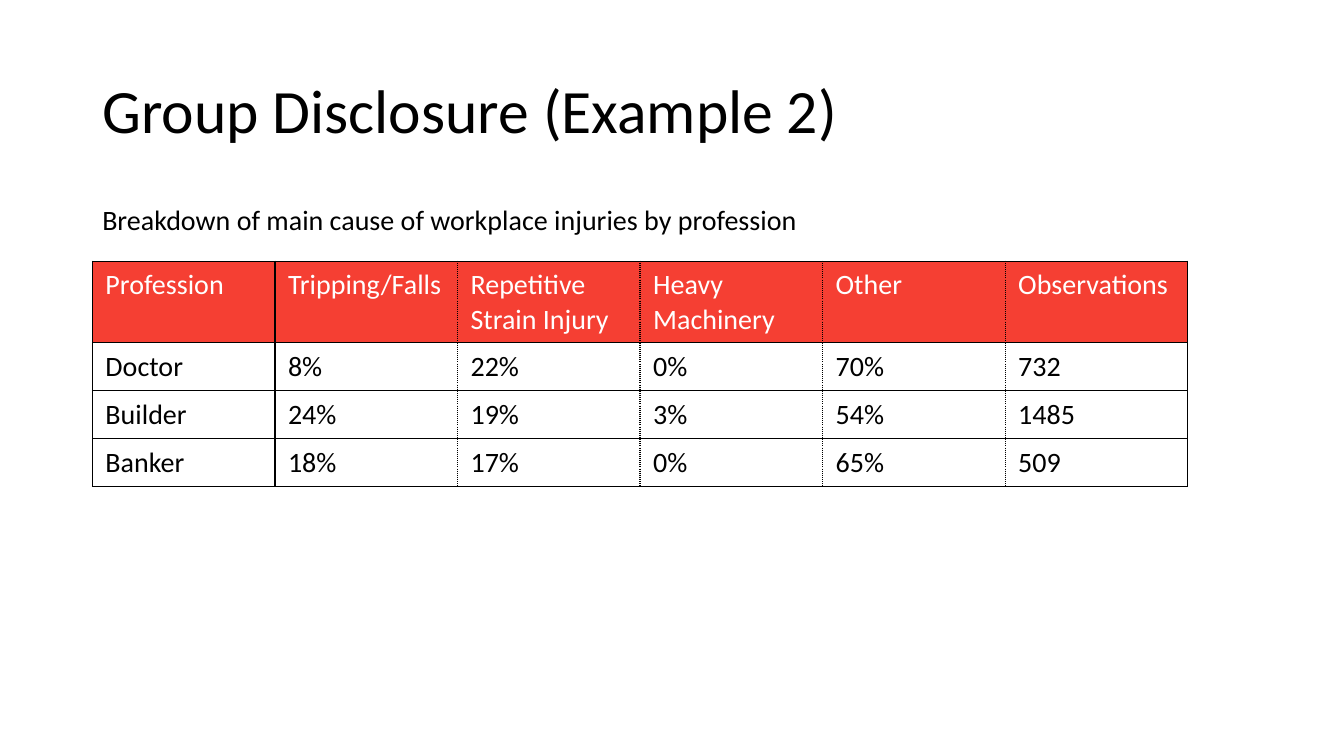
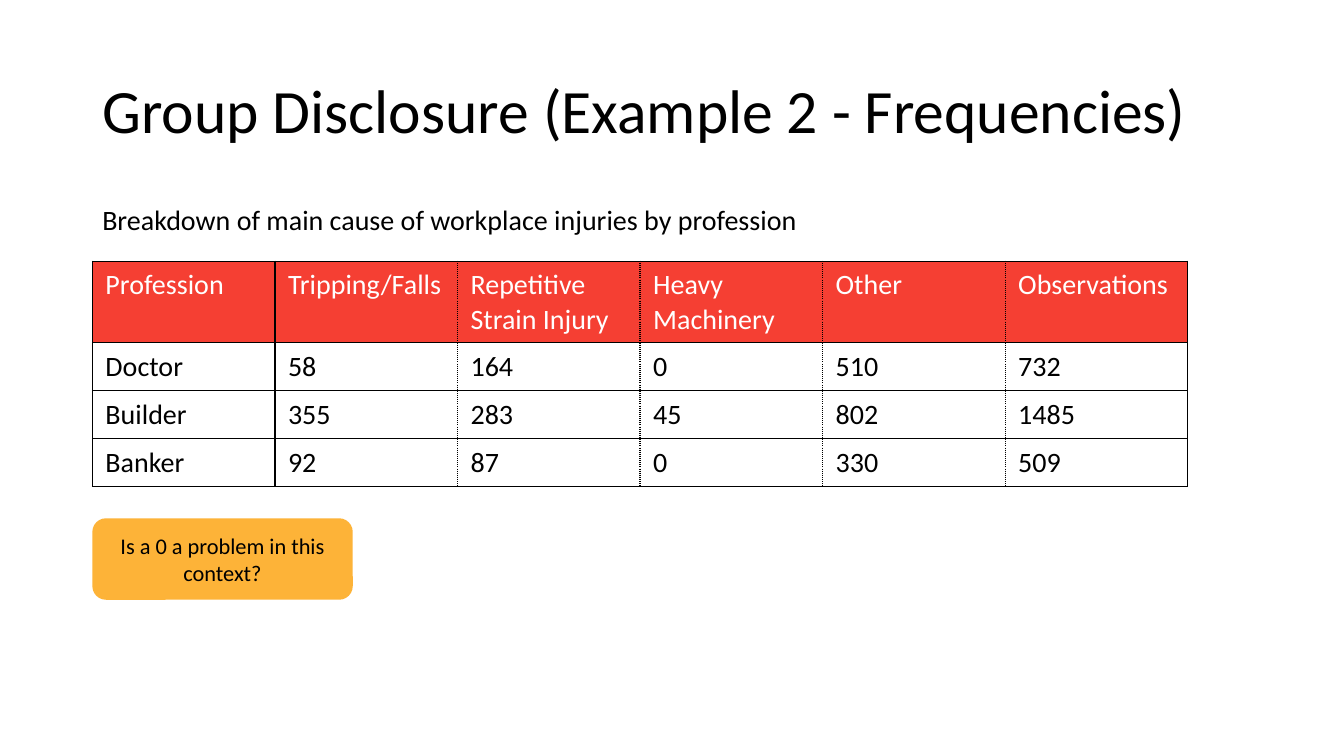
import dataclasses

import lxml.etree
import pptx
import pptx.dml.color
import pptx.enum.shapes
import pptx.enum.text
import pptx.oxml.ns
import pptx.util

COLS, ROWS = 160, 90
UNIT = pptx.util.Inches(7.5) // ROWS


@dataclasses.dataclass(frozen=True)
class Theme:
    """Hold the colours, font and sizes that the slides share."""
    font: str = "Calibri"
    ink: str = "000000"
    pale: str = "FFFFFF"
    head: str = "F53F33"
    note: str = "FDB338"
    title: int = 44
    body: int = 20
    small: int = 16
    rule: float = 1


@dataclasses.dataclass(frozen=True)
class Box:
    """Hold a region in columns and rows of the slide grid."""
    left: float
    top: float
    width: float
    height: float

    def area(self):
        """Return the region in slide lengths."""
        return [size(n) for n in (self.left, self.top, self.width, self.height)]


THEME = Theme()
TITLE = Box(11, 4.8, 138, 17.4)
LEAD = Box(11, 24, 138, 6)
GRID = Box(11, 31.1, 130.4, 26.8)
NOTE = Box(11, 61.7, 31, 9.7)
HEAD_ROW = 9.7

INTRO = "Breakdown of main cause of workplace injuries by profession"
HEADS = ["Profession", "Tripping/Falls", "Repetitive Strain Injury",
         "Heavy Machinery", "Other", "Observations"]
SHARES = [
    ["Doctor", "8%", "22%", "0%", "70%", "732"],
    ["Builder", "24%", "19%", "3%", "54%", "1485"],
    ["Banker", "18%", "17%", "0%", "65%", "509"],
]
COUNTS = [
    ["Doctor", "58", "164", "0", "510", "732"],
    ["Builder", "355", "283", "45", "802", "1485"],
    ["Banker", "92", "87", "0", "330", "509"],
]


def size(units):
    """Turn grid units into a slide length."""
    return pptx.util.Emu(round(units * UNIT))


def tint(code):
    """Turn a hex code into a colour."""
    return pptx.dml.color.RGBColor.from_string(code)


def write(frame, text, points, ink=THEME.ink, align=pptx.enum.text.PP_ALIGN.LEFT):
    """Set the text of a frame and format its runs."""
    frame.text = text
    frame.word_wrap = True
    for para in frame.paragraphs:
        para.alignment = align
        for run in para.runs:
            run.font.name = THEME.font
            run.font.size = pptx.util.Pt(points)
            run.font.color.rgb = tint(ink)


def edge(cell, sides):
    """Draw the borders of a cell from pairs of side and dash."""
    props = cell._tc.get_or_add_tcPr()
    for place, (side, dash) in enumerate(sides):
        line = lxml.etree.Element(pptx.oxml.ns.qn(f"a:ln{side}"),
                                  w=str(pptx.util.Pt(THEME.rule)))
        fill = lxml.etree.SubElement(line, pptx.oxml.ns.qn("a:solidFill"))
        lxml.etree.SubElement(fill, pptx.oxml.ns.qn("a:srgbClr"), val=THEME.ink)
        lxml.etree.SubElement(line, pptx.oxml.ns.qn("a:prstDash"), val=dash)
        props.insert(place, line)


def add_title(slide, box, text):
    """Place and format the title."""
    shape = slide.shapes.title
    shape.left, shape.top, shape.width, shape.height = box.area()
    frame = shape.text_frame
    write(frame, text, THEME.title)
    frame.auto_size = pptx.enum.text.MSO_AUTO_SIZE.NONE
    frame.vertical_anchor = pptx.enum.text.MSO_ANCHOR.MIDDLE
    frame.paragraphs[0].line_spacing = 0.9


def add_lead(slide, box, text):
    """Place the line that introduces the table."""
    frame = slide.shapes.add_textbox(*box.area()).text_frame
    write(frame, text, THEME.body)
    frame.paragraphs[0].line_spacing = 0.9


def add_grid(slide, box, rows):
    """Place a table with a coloured head and dotted inner columns."""
    wide = len(HEADS)
    table = slide.shapes.add_table(len(rows) + 1, wide, *box.area()).table
    table.first_row = table.horz_banding = False
    for col in table.columns:
        col.width = size(box.width / wide)
    for num, row in enumerate([HEADS, *rows]):
        high = (box.height - HEAD_ROW) / len(rows) if num else HEAD_ROW
        table.rows[num].height = size(high)
        for col, text in enumerate(row):
            cell = table.cell(num, col)
            cell.margin_left = cell.margin_right = pptx.util.Inches(0.13)
            cell.margin_top = cell.margin_bottom = pptx.util.Inches(0.07)
            write(cell.text_frame, text, THEME.body, THEME.ink if num else THEME.pale)
            if num:
                cell.fill.background()
            else:
                cell.fill.solid()
                cell.fill.fore_color.rgb = tint(THEME.head)
            left = "solid" if col < 2 else "sysDot"
            right = "solid" if col in (0, wide - 1) else "sysDot"
            edge(cell, [("L", left), ("R", right), ("T", "solid"), ("B", "solid")])


def add_note(slide, box, text):
    """Place a rounded box with a question."""
    kind = pptx.enum.shapes.MSO_SHAPE.ROUNDED_RECTANGLE
    shape = slide.shapes.add_shape(kind, *box.area())
    shape.shadow.inherit = False
    shape.fill.solid()
    shape.fill.fore_color.rgb = tint(THEME.note)
    shape.line.fill.background()
    write(shape.text_frame, text, THEME.small, align=pptx.enum.text.PP_ALIGN.CENTER)
    shape.text_frame.vertical_anchor = pptx.enum.text.MSO_ANCHOR.MIDDLE


def add_slide(deck, title, rows):
    """Add a slide with a title, a lead line and a table."""
    slide = deck.slides.add_slide(deck.slide_layouts.get_by_name("Title Only"))
    add_title(slide, TITLE, title)
    add_lead(slide, LEAD, INTRO)
    add_grid(slide, GRID, rows)
    return slide


def main():
    """Build and save the slides."""
    deck = pptx.Presentation()
    deck.slide_width, deck.slide_height = size(COLS), size(ROWS)
    add_slide(deck, "Group Disclosure (Example 2)", SHARES)
    last = add_slide(deck, "Group Disclosure (Example 2 - Frequencies)", COUNTS)
    add_note(last, NOTE, "Is a 0 a problem in this context?")
    deck.save("out.pptx")


if __name__ == "__main__":
    main()
